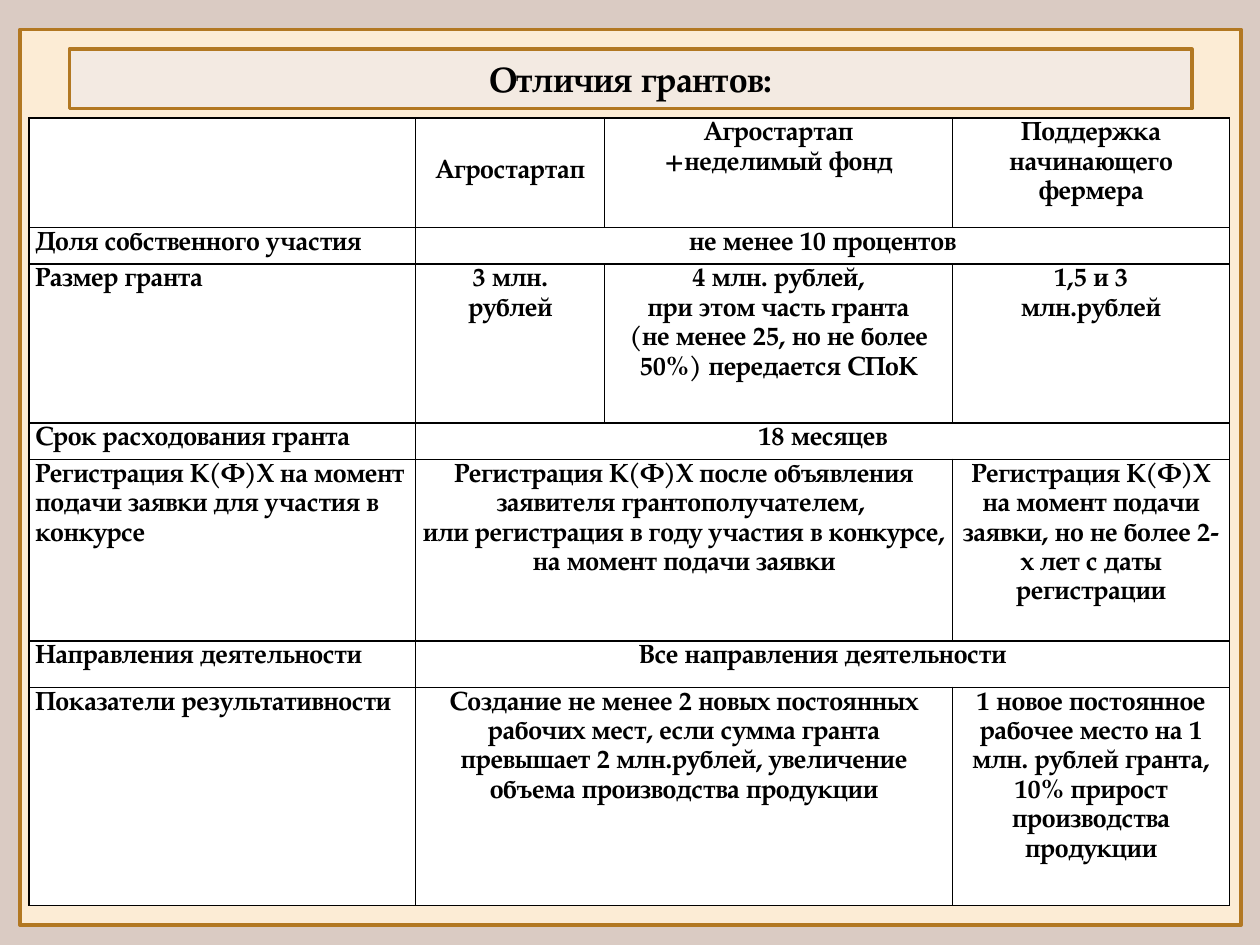
from dataclasses import dataclass

from lxml.etree import SubElement
from pptx import Presentation
from pptx.dml.color import RGBColor
from pptx.enum.shapes import MSO_SHAPE
from pptx.enum.text import MSO_ANCHOR, MSO_AUTO_SIZE, PP_ALIGN
from pptx.oxml import parse_xml
from pptx.oxml.ns import nsdecls, qn
from pptx.util import Emu, Inches, Pt

FONT = "TeX Gyre Pagella"
COLORS = {
    "background": "DACBC3",
    "panel": "FCECD5",
    "heading": "F3EAE2",
    "frame": "B27822",
    "cell": "FFFFFF",
    "text": "000000",
}
WIDTH, HEIGHT = Inches(10), Inches(7.5)
COLUMN_WIDTHS = (3.07, 1.5, 2.76, 2.2)
ROW_HEIGHTS = (0.87, 0.29, 1.26, 0.29, 1.44, 0.37, 1.73)


@dataclass(frozen=True)
class Box:
    """Position and size as shares of the slide."""
    left: float
    top: float
    width: float
    height: float

    def emu(self) -> tuple[Emu, Emu, Emu, Emu]:
        return (Emu(int(self.left * WIDTH)), Emu(int(self.top * HEIGHT)),
                Emu(int(self.width * WIDTH)), Emu(int(self.height * HEIGHT)))


@dataclass(frozen=True)
class Entry:
    """Content of one table cell, one string per paragraph."""
    row: int
    column: int
    lines: tuple[str, ...]
    columns: int = 1
    top_gap: float = 0


PANEL = Box(0.016, 0.031, 0.969, 0.948)
HEADING = Box(0.055, 0.052, 0.891, 0.063)
TABLE = Box(0.023, 0.125, 0.953, 0.833)

ROW_LABELS = (
    "Доля собственного участия",
    "Размер гранта",
    "Срок расходования гранта",
    "Регистрация К(Ф)Х на момент подачи заявки для участия в конкурсе",
    "Направления деятельности",
    "Показатели результативности",
)
ENTRIES = [Entry(row, 0, (label,)) for row, label in enumerate(ROW_LABELS, 1)] + [
    Entry(0, 1, ("Агростартап",), top_gap=0.3),
    Entry(0, 2, ("Агростартап", "+неделимый фонд")),
    Entry(0, 3, ("Поддержка начинающего фермера",)),
    Entry(1, 1, ("не менее 10 процентов",), columns=3),
    Entry(2, 1, ("3 млн.", "рублей")),
    Entry(2, 2, ("4 млн. рублей,", "при этом часть гранта",
                 "(не менее 25, но не более 50%) передается СПоК")),
    Entry(2, 3, ("1,5 и 3", "млн.рублей")),
    Entry(3, 1, ("18 месяцев",), columns=3),
    Entry(4, 1, ("Регистрация К(Ф)Х после объявления заявителя грантополучателем, ",
                 "или регистрация в году участия в конкурсе, на момент подачи заявки"),
          columns=2),
    Entry(4, 3, ("Регистрация К(Ф)Х на момент подачи заявки, "
                 "но не более 2-х лет с даты регистрации",)),
    Entry(5, 1, ("Все направления деятельности",), columns=3),
    Entry(6, 1, ("Создание не менее 2 новых постоянных рабочих мест, если сумма гранта "
                 "превышает 2 млн.рублей, увеличение объема производства продукции",),
          columns=2),
    Entry(6, 3, ("1 новое постоянное рабочее место на 1 млн. рублей гранта, "
                 "10% прирост производства продукции",)),
]


def color(name: str) -> RGBColor:
    return RGBColor.from_string(COLORS[name])


def add_run(paragraph, text: str, size: float) -> None:
    run = paragraph.add_run()
    run.text = text
    run.font.name = FONT
    run.font.size = Pt(size)
    run.font.bold = True
    run.font.color.rgb = color("text")


def paint(shape, fill: str) -> None:
    shape.fill.solid()
    shape.fill.fore_color.rgb = color(fill)
    shape.line.color.rgb = color("frame")
    shape.line.width = Pt(2)


def add_panel(slide) -> None:
    panel = slide.shapes.add_shape(MSO_SHAPE.RECTANGLE, *PANEL.emu())
    panel.shadow.inherit = False
    paint(panel, "panel")
    # Behind the title placeholder
    slide.shapes._spTree.insert(2, panel._element)


def format_heading(title) -> None:
    title.left, title.top, title.width, title.height = HEADING.emu()
    outline = SubElement(title._element.spPr, qn("a:prstGeom"), prst="roundRect")
    SubElement(outline, qn("a:avLst"))
    paint(title, "heading")
    frame = title.text_frame
    frame.word_wrap = True
    frame.auto_size = MSO_AUTO_SIZE.NONE
    frame.vertical_anchor = MSO_ANCHOR.MIDDLE
    frame.paragraphs[0].alignment = PP_ALIGN.CENTER
    add_run(frame.paragraphs[0], "Отличия грантов:", 20)


def format_cell(cell) -> None:
    cell.margin_left = cell.margin_right = Inches(0.05)
    cell.margin_top = cell.margin_bottom = 0
    cell.fill.solid()
    cell.fill.fore_color.rgb = color("cell")
    properties = cell._tc.get_or_add_tcPr()
    for position, side in enumerate("LRTB"):
        properties.insert(position, parse_xml(
            f'<a:ln{side} {nsdecls("a")} w="{Pt(1)}"><a:solidFill>'
            f'<a:srgbClr val="{COLORS["text"]}"/></a:solidFill></a:ln{side}>'))


def fill_entry(table, entry: Entry) -> None:
    cell = table.cell(entry.row, entry.column)
    if entry.columns > 1:
        cell.merge(table.cell(entry.row, entry.column + entry.columns - 1))
    cell.margin_top = Inches(entry.top_gap)
    frame = cell.text_frame
    for index, line in enumerate(entry.lines):
        paragraph = frame.add_paragraph() if index else frame.paragraphs[0]
        paragraph.alignment = PP_ALIGN.CENTER if entry.column else PP_ALIGN.LEFT
        paragraph.line_spacing = 1.15
        add_run(paragraph, line, 15)


def add_comparison(slide) -> None:
    table = slide.shapes.add_table(
        len(ROW_HEIGHTS), len(COLUMN_WIDTHS), *TABLE.emu()).table
    table.first_row = table.horz_banding = False
    for column, width in zip(table.columns, COLUMN_WIDTHS):
        column.width = Inches(width)
    for row, height in zip(table.rows, ROW_HEIGHTS):
        row.height = Inches(height)
    for cell in table.iter_cells():
        format_cell(cell)
    for entry in ENTRIES:
        fill_entry(table, entry)


def main() -> None:
    presentation = Presentation()
    presentation.slide_width, presentation.slide_height = WIDTH, HEIGHT
    slide = presentation.slides.add_slide(presentation.slide_layouts[5])
    slide.background.fill.solid()
    slide.background.fill.fore_color.rgb = color("background")
    add_panel(slide)
    format_heading(slide.shapes.title)
    add_comparison(slide)
    presentation.save("out.pptx")


if __name__ == "__main__":
    main()
